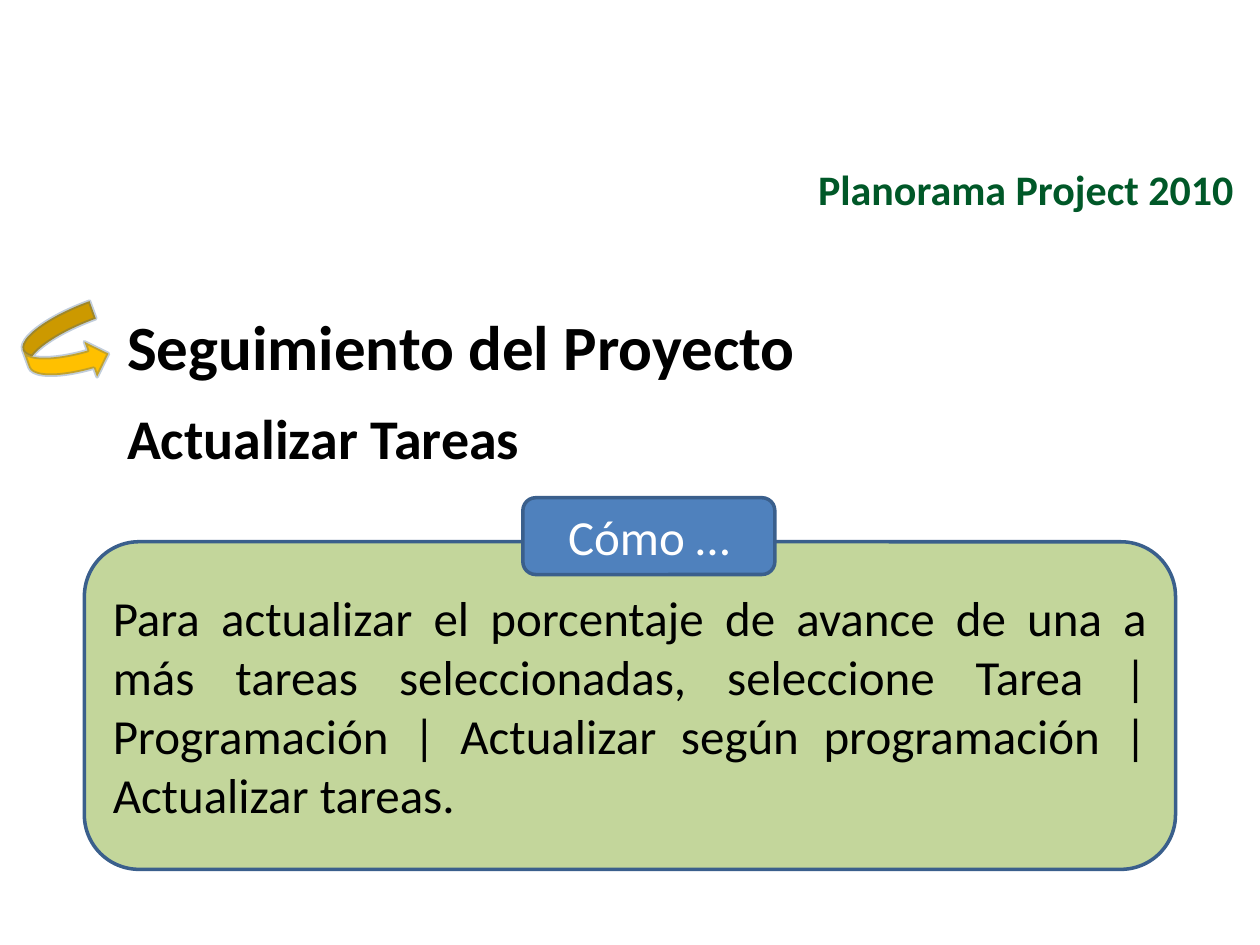
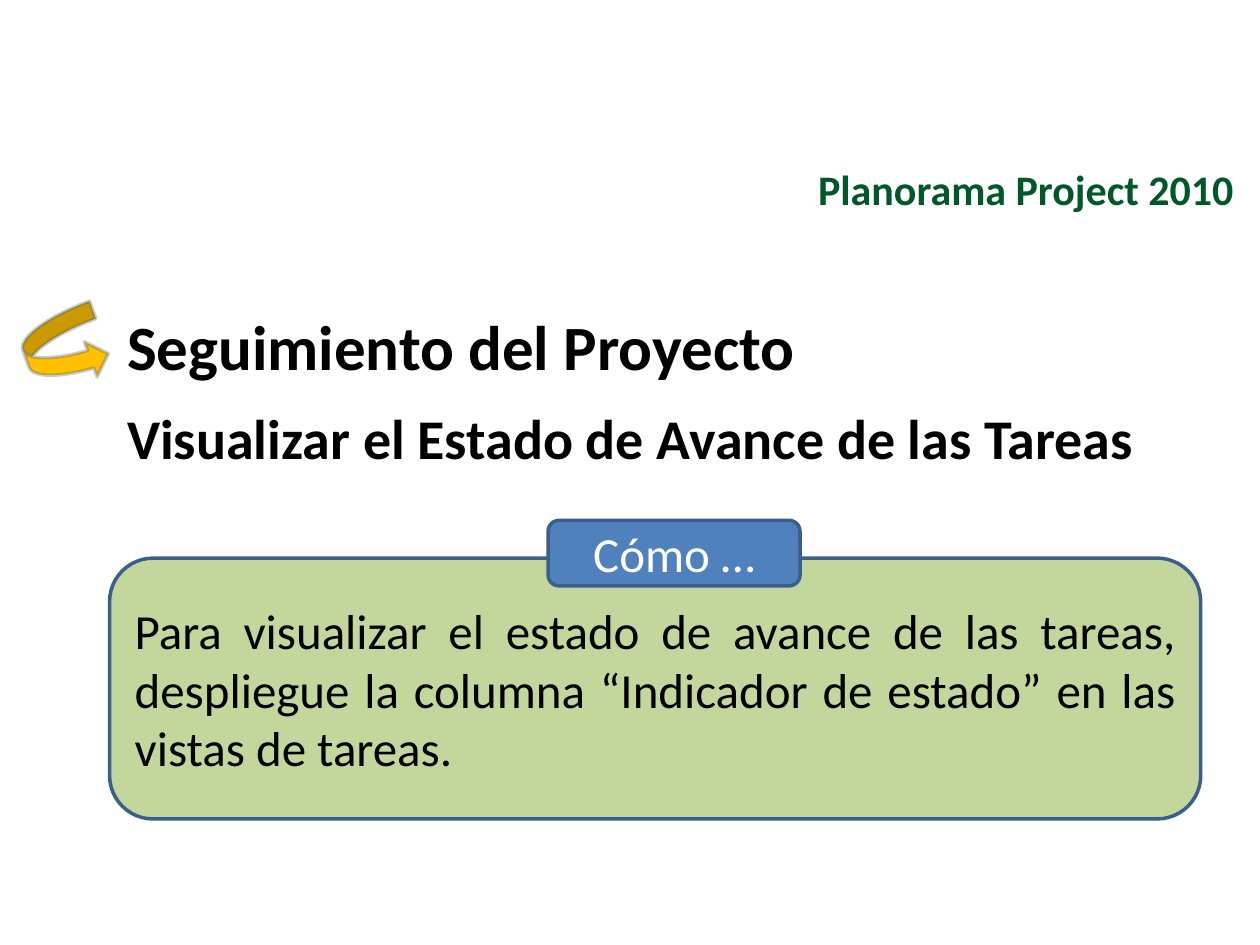
from lxml import etree
from pptx import Presentation
from pptx.dml.color import RGBColor
from pptx.enum.shapes import MSO_SHAPE
from pptx.enum.text import MSO_ANCHOR, PP_ALIGN
from pptx.oxml.ns import qn
from pptx.util import Inches, Pt

ROUND, ARROW = MSO_SHAPE.ROUNDED_RECTANGLE, MSO_SHAPE.CURVED_RIGHT_ARROW
TOP, MID = MSO_ANCHOR.TOP, MSO_ANCHOR.MIDDLE
LEFT, RIGHT = PP_ALIGN.LEFT, PP_ALIGN.RIGHT
CENTER, JUST = PP_ALIGN.CENTER, PP_ALIGN.JUSTIFY

FONT = "Calibri"
COLORS = {
    "brand": "005828", "ink": "000000", "white": "FFFFFF", "gold": "FFC000",
    "edge": "3A5F8C", "panel": "C3D69B", "tab": "4F81BD",
}
BRAND = "Planorama Project 2010"
TITLE = "Seguimiento del Proyecto"
LABEL = "Cómo …"
INDENT = 0.38
WIDTH = 8.66
TAB_DX, TAB_W = 3.48, 2

SLIDES = [
    {
        "topic": "Actualizar Tareas",
        "panel": (0.67, 4.3, 2.6),
        "tab": (3.95, 0.61),
        "steps": "Para actualizar el porcentaje de avance de una a más tareas "
                 "seleccionadas, seleccione Tarea | Programación | Actualizar "
                 "según programación | Actualizar tareas.",
    },
    {
        "topic": "Visualizar el Estado de Avance de las Tareas",
        "panel": (0.87, 4.43, 2.07),
        "tab": (4.13, 0.52),
        "steps": "Para visualizar el estado de avance de las tareas, despliegue "
                 "la columna “Indicador de estado” en las vistas de tareas.",
    },
]


def color(name):
    """Return the named colour."""
    return RGBColor.from_string(COLORS[name])


def setup(frame, anchor):
    """Make a text frame wrap and anchor its text."""
    frame.word_wrap = True
    frame.vertical_anchor = anchor


def write(par, text, size, ink, align, bold=False, after=0):
    """Write one styled run in a paragraph."""
    par.alignment = align
    par.space_after = Pt(after)
    run = par.add_run()
    run.text = text
    font = run.font
    font.name, font.size, font.bold = FONT, Pt(size), bold
    font.color.rgb = color(ink)


def hang(par):
    """Give a paragraph a hanging indent."""
    props = par._p.get_or_add_pPr()
    props.set("marL", str(Inches(INDENT)))
    props.set("indent", str(-Inches(INDENT)))


def add_text(slide, box, anchor):
    """Add a wrapping text box and return its frame."""
    frame = slide.shapes.add_textbox(*map(Inches, box)).text_frame
    setup(frame, anchor)
    return frame


def add_form(shapes, kind, box, fill):
    """Add a filled preset shape with the shared outline."""
    form = shapes.add_shape(kind, *map(Inches, box))
    form.shadow.inherit = False
    form.fill.solid()
    form.fill.fore_color.rgb = color(fill)
    form.line.color.rgb = color("edge")
    form.line.width = Pt(2)
    return form


def add_card(shapes, box, fill, text, ink, align, after=0):
    """Add a rounded box with its text."""
    frame = add_form(shapes, ROUND, box, fill).text_frame
    setup(frame, MID)
    write(frame.paragraphs[0], text, 28, ink, align, after=after)


def add_brand(slide):
    """Add the course name at the top right."""
    frame = add_text(slide, (5.39, 1.15, 4.5, 0.69), MID)
    write(frame.paragraphs[0], BRAND, 24, "brand", RIGHT, True)


def add_heads(slide, topic):
    """Add the section title and the topic under it."""
    frame = add_text(slide, (0.91, 2.39, 8.59, 1.6), TOP)
    pars = frame.paragraphs[0], frame.add_paragraph()
    for par, text, size in zip(pars, (TITLE, topic), (36, 32)):
        hang(par)
        write(par, text, size, "ink", LEFT, True, 12)


def add_arrow(slide):
    """Add the tilted gold arrow with a faint outline."""
    arrow = add_form(slide.shapes, ARROW, (0.2, 2.48, 0.63, 0.59), "gold")
    arrow.rotation = 340.1
    tint = arrow.line._ln.find(".//" + qn("a:srgbClr"))
    etree.SubElement(tint, qn("a:alpha"), val="31000")


def add_how(slide, panel, tab, steps):
    """Add the grouped panel of steps and its tab."""
    left, top, high = panel
    tab_top, tab_high = tab
    shapes = slide.shapes.add_group_shape().shapes
    add_card(shapes, (left, top, WIDTH, high), "panel", steps, "ink", JUST, 6)
    add_card(shapes, (left + TAB_DX, tab_top, TAB_W, tab_high), "tab",
             LABEL, "white", CENTER)


def main():
    """Build and save the slides."""
    deck = Presentation()
    deck.slide_width, deck.slide_height = Inches(10), Inches(7.5)
    for item in SLIDES:
        slide = deck.slides.add_slide(deck.slide_layouts[6])
        add_brand(slide)
        add_heads(slide, item["topic"])
        add_arrow(slide)
        add_how(slide, item["panel"], item["tab"], item["steps"])
    deck.save("out.pptx")


if __name__ == "__main__":
    main()
